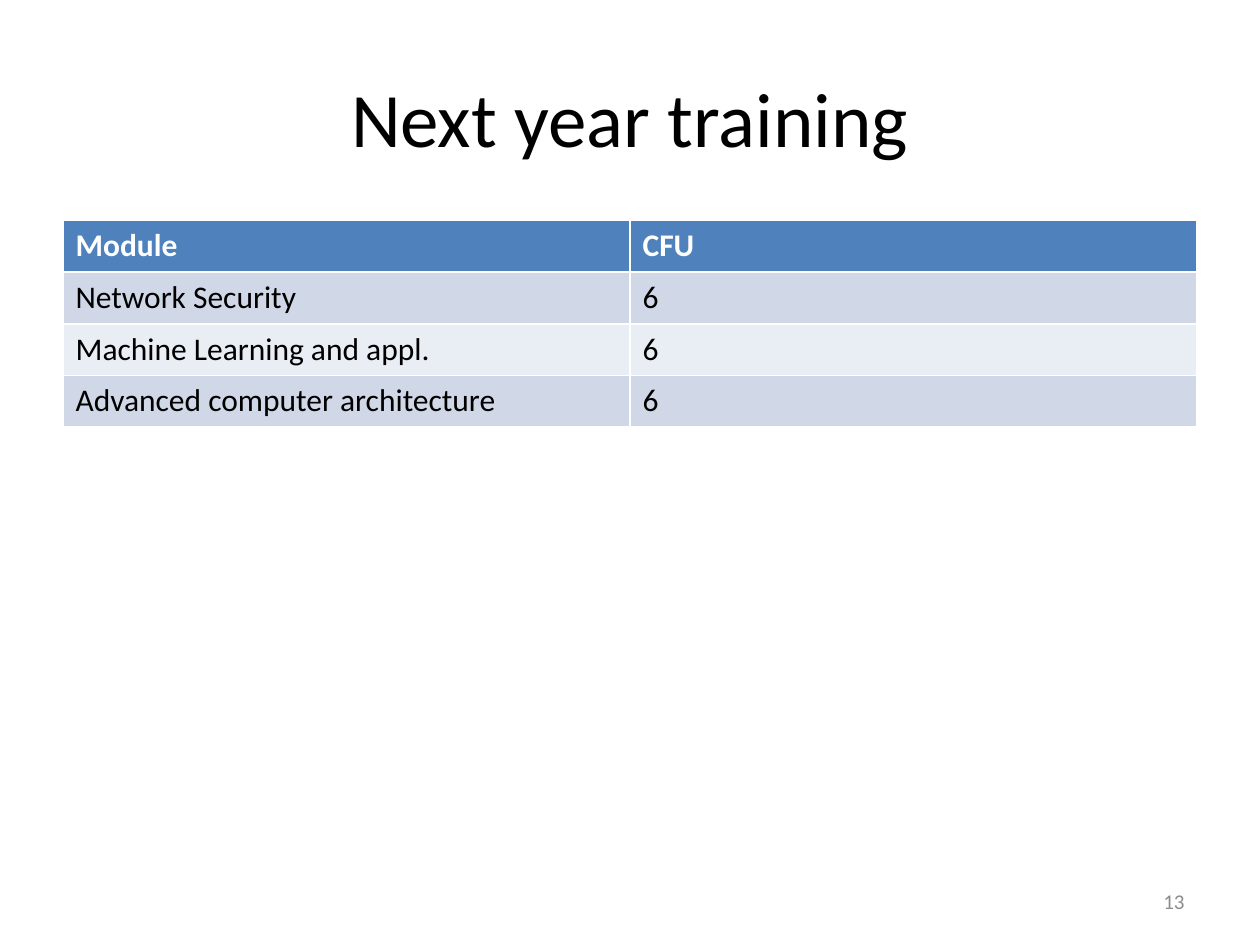
"""Build the slide that lists next year's training modules."""
from dataclasses import dataclass

from pptx import Presentation
from pptx.dml.color import RGBColor as Rgb
from pptx.enum.text import MSO_ANCHOR as Anchor, PP_ALIGN as Align
from pptx.util import Inches, Pt


@dataclass(frozen=True)
class Theme:
    font: str = "Calibri"
    ink: str = "000000"
    muted: str = "8C8C8C"
    light: str = "FFFFFF"
    header: str = "4F81BD"
    bands: tuple = ("D0D8E8", "E9EDF4")
    title_size: int = 44
    table_size: int = 18
    number_size: int = 12


THEME = Theme()
MODULES = [
    ("Module", "CFU"),
    ("Network Security", "6"),
    ("Machine Learning and appl.", "6"),
    ("Advanced computer architecture", "6"),
]


def write(frame, text, *, size, color=THEME.ink, bold=False,
          align=Align.LEFT, anchor=Anchor.TOP):
    frame.word_wrap = True
    frame.vertical_anchor = anchor
    paragraph = frame.paragraphs[0]
    paragraph.alignment = align
    run = paragraph.add_run()
    run.text = text
    run.font.name = THEME.font
    run.font.size = Pt(size)
    run.font.bold = bold
    run.font.color.rgb = Rgb.from_string(color)


def add_title(slide, text):
    title = slide.shapes.title
    title.left, title.top = Inches(0.5), Inches(0.3)
    title.width, title.height = Inches(9), Inches(1.25)
    write(title.text_frame, text, size=THEME.title_size,
          align=Align.CENTER, anchor=Anchor.MIDDLE)


def add_module_table(slide, rows):
    row_height = Inches(0.41)
    modules = slide.shapes.add_table(
        len(rows), len(rows[0]), Inches(0.5), Inches(1.75),
        Inches(9), row_height * len(rows)).table
    for index, values in enumerate(rows):
        modules.rows[index].height = row_height
        is_header = index == 0
        fill = THEME.header if is_header else THEME.bands[(index - 1) % 2]
        for column, value in enumerate(values):
            cell = modules.cell(index, column)
            cell.fill.solid()
            cell.fill.fore_color.rgb = Rgb.from_string(fill)
            write(cell.text_frame, value, size=THEME.table_size, bold=is_header,
                  color=THEME.light if is_header else THEME.ink)


def add_slide_number(slide, number):
    box = slide.shapes.add_textbox(
        Inches(7.17), Inches(6.95), Inches(2.33), Inches(0.4))
    write(box.text_frame, number, size=THEME.number_size, color=THEME.muted,
          align=Align.RIGHT, anchor=Anchor.MIDDLE)


def main():
    deck = Presentation()
    deck.slide_width, deck.slide_height = Inches(10), Inches(7.5)
    slide = deck.slides.add_slide(deck.slide_layouts.get_by_name("Title Only"))
    add_title(slide, "Next year training")
    add_module_table(slide, MODULES)
    add_slide_number(slide, "13")
    deck.save("out.pptx")


if __name__ == "__main__":
    main()
